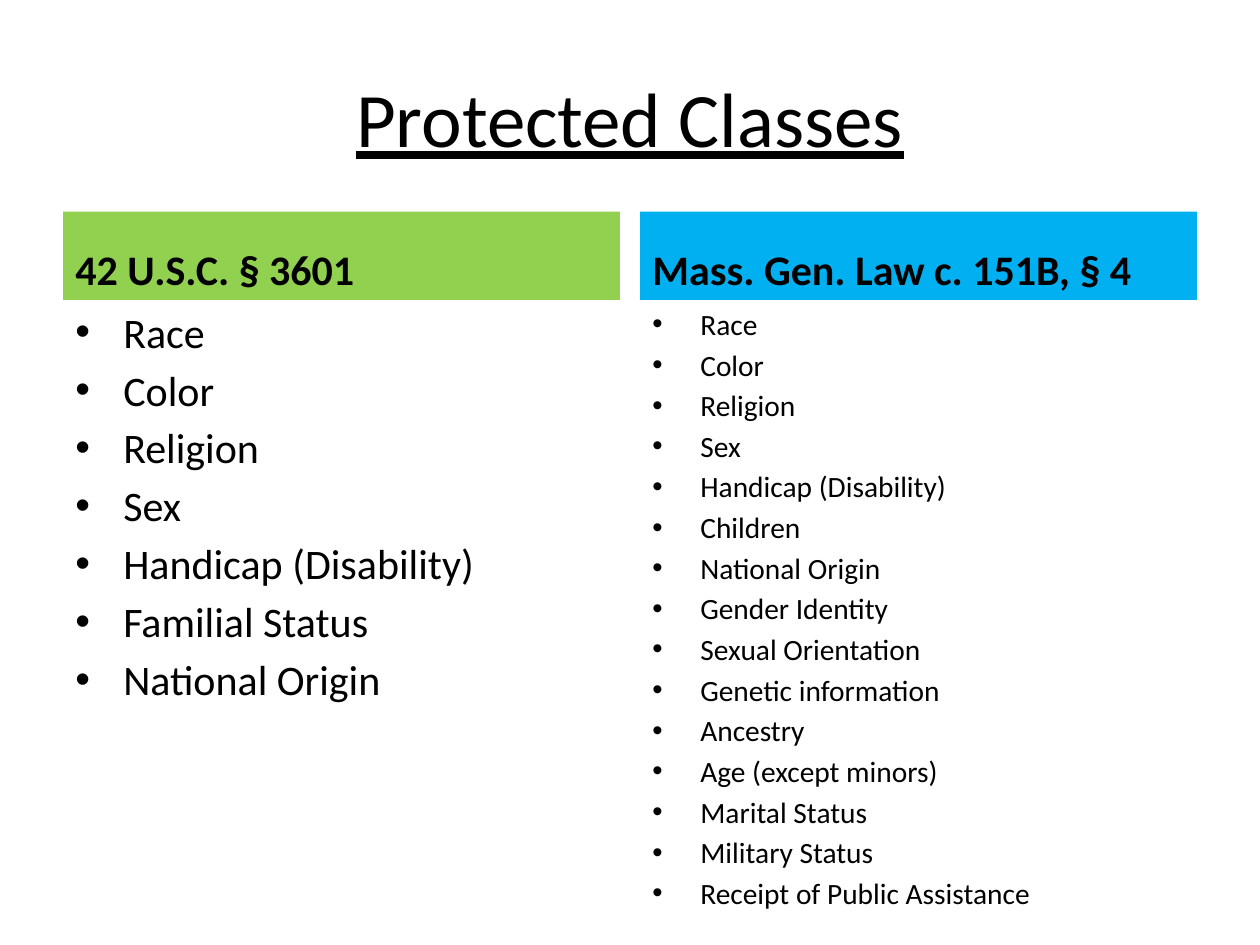
import dataclasses

import pptx
import pptx.dml.color
import pptx.enum.shapes
import pptx.enum.text
import pptx.oxml.ns
import pptx.util
from lxml import etree

Inches = pptx.util.Inches
Pt = pptx.util.Pt
RGB = pptx.dml.color.RGBColor
ALIGN = pptx.enum.text.PP_ALIGN
ANCHOR = pptx.enum.text.MSO_ANCHOR


@dataclasses.dataclass(frozen=True)
class Theme:
    font: str = "Calibri"
    text: str = "000000"
    federal: str = "92D050"
    state: str = "00B0F0"
    title_size: float = 44
    body_size: float = 24
    dense_size: float = 16.8
    space_ratio: float = 0.18


class SlideBuilder:
    def __init__(self, slide, theme):
        self.slide = slide
        self.theme = theme

    def fill_text(self, sp, lines, size, anchor, align=ALIGN.LEFT, **formats):
        tf = sp.text_frame
        tf.word_wrap = True
        tf.vertical_anchor = anchor
        for i, line in enumerate(lines):
            p = tf.paragraphs[0] if i == 0 else tf.add_paragraph()
            p.alignment = align
            p.space_before = Pt(size * self.theme.space_ratio)
            r = p.add_run()
            r.text = line
            r.font.color.rgb = RGB.from_string(self.theme.text)
            values = {"name": self.theme.font, "size": Pt(size), **formats}
            for name, value in values.items():
                setattr(r.font, name, value)
        return tf

    def title(self, text, *box):
        sp = self.slide.shapes.add_textbox(*map(Inches, box))
        self.fill_text(sp, [text], self.theme.title_size, ANCHOR.MIDDLE,
                       ALIGN.CENTER, underline=True)

    def heading(self, text, color, *box):
        sp = self.slide.shapes.add_shape(
            pptx.enum.shapes.MSO_SHAPE.RECTANGLE, *map(Inches, box))
        sp.shadow.inherit = False
        sp.fill.solid()
        sp.fill.fore_color.rgb = RGB.from_string(color)
        sp.line.fill.background()
        self.fill_text(sp, [text], self.theme.body_size, ANCHOR.BOTTOM,
                       bold=True)

    def bullets(self, items, size, *box):
        sp = self.slide.shapes.add_textbox(*map(Inches, box))
        tf = self.fill_text(sp, items, size, ANCHOR.TOP)
        qn = pptx.oxml.ns.qn
        indent = Inches(0.38)
        for p in tf.paragraphs:
            pPr = p._p.get_or_add_pPr()
            pPr.set("marL", str(indent))
            pPr.set("indent", str(-indent))
            etree.SubElement(pPr, qn("a:buFont"), typeface="Arial")
            etree.SubElement(pPr, qn("a:buChar"), char="•")


def main():
    theme = Theme()
    prs = pptx.Presentation()
    prs.slide_width, prs.slide_height = Inches(10), Inches(7.5)
    s = SlideBuilder(prs.slides.add_slide(prs.slide_layouts[6]), theme)

    s.title("Protected Classes", 0.5, 0.3, 9, 1.25)

    federal = ["Race", "Color", "Religion", "Sex", "Handicap (Disability)",
               "Familial Status", "National Origin"]
    state = ["Race", "Color", "Religion", "Sex", "Handicap (Disability)",
             "Children", "National Origin", "Gender Identity",
             "Sexual Orientation", "Genetic information", "Ancestry",
             "Age (except minors)", "Marital Status", "Military Status",
             "Receipt of Public Assistance"]
    columns = [
        (0.5, "42 U.S.C. § 3601", theme.federal, federal, theme.body_size),
        (5.08, "Mass. Gen. Law c. 151B, § 4", theme.state, state,
         theme.dense_size),
    ]
    top, width, bar_height, list_height = 1.68, 4.42, 0.7, 4.32
    for left, law, color, classes, size in columns:
        s.heading(law, color, left, top, width, bar_height)
        s.bullets(classes, size, left, top + bar_height, width, list_height)

    prs.save("out.pptx")


if __name__ == "__main__":
    main()
